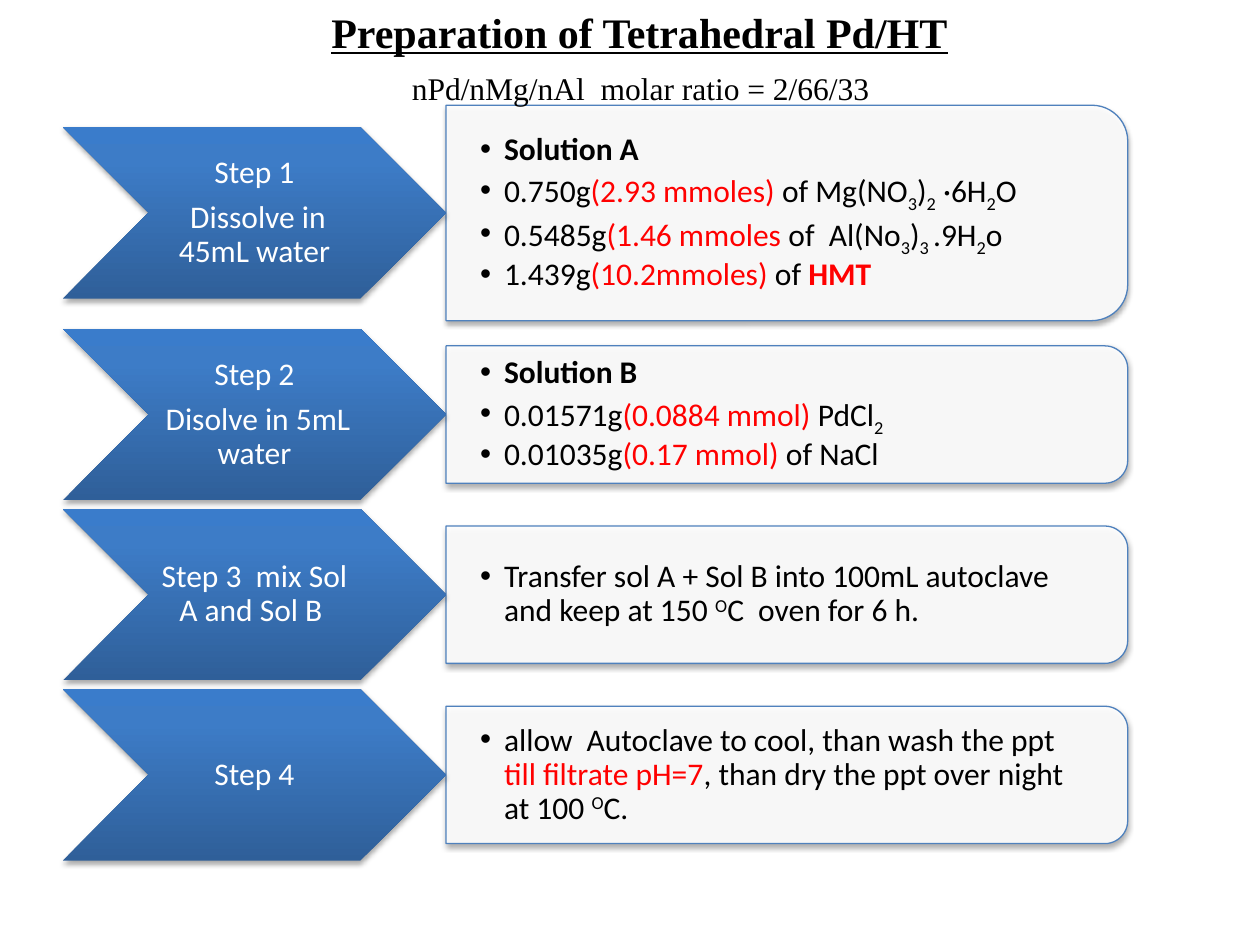
from dataclasses import dataclass
from typing import NamedTuple

from pptx import Presentation, oxml, util as u
from pptx.dml.color import RGBColor
from pptx.enum import shapes, text
from pptx.oxml import ns


@dataclass(frozen=True)
class Theme:
    black: str = "000000"
    white: str = "FFFFFF"
    red: str = "FF0000"
    edge: str = "4F81BD"
    grad: tuple = ((0, "2F5F99"), (80, "3D7CC7"), (100, "3A7CCB"))
    head: str = "Times New Roman"
    body: str = "Calibri"
    big: int = 24
    size: int = 18


class Bit(NamedTuple):
    text: str
    red: bool = False
    bold: bool = False
    base: int = 0


class Step(NamedTuple):
    mid: float
    high: float
    label: list[str]
    lines: list[list[Bit]]


T = Theme()
LEFT, WIDE, TALL = 0.5, 3.04, 1.36
CARD, SPAN = 3.54, 5.41
SUB2, SUB3 = Bit("2", base=-25), Bit("3", base=-25)
DEG = Bit("O", base=30)

STEPS = [
    Step(1.69, 1.71, ["Step 1", " Dissolve in 45mL water"], [
        [Bit("Solution A", bold=True)],
        [Bit("0.750g"), Bit("(2.93 mmoles) ", red=True), Bit("of Mg(NO"), SUB3,
         Bit(")"), SUB2, Bit(" ·6H"), SUB2, Bit("O")],
        [Bit("0.5485g"), Bit("(1.46 mmoles ", red=True), Bit("of  Al(No"), SUB3,
         Bit(")"), Bit("3 ", base=-25), Bit(".9H"), SUB2, Bit("o")],
        [Bit("1.439g"), Bit("(10.2mmoles) ", red=True), Bit("of "),
         Bit("HMT", red=True, bold=True)],
    ]),
    Step(3.29, 1.09, ["Step 2", " Disolve in 5mL water"], [
        [Bit("Solution B", bold=True)],
        [Bit("0.01571g"), Bit("(0.0884 mmol) ", red=True), Bit("PdCl"), SUB2],
        [Bit("0.01035g"), Bit("(0.17 mmol) ", red=True), Bit("of NaCl")],
    ]),
    Step(4.72, 1.09, ["Step 3  mix Sol A and Sol B "], [
        [Bit("Transfer sol A + Sol B into 100mL autoclave  and keep at 150 "),
         DEG, Bit("C  oven for 6 h.")],
    ]),
    Step(6.15, 1.09, ["Step 4"], [
        [Bit("allow  Autoclave to cool, than wash the ppt "),
         Bit("till filtrate pH=7", red=True),
         Bit(", than dry the ppt over night at 100 "), DEG, Bit("C.")],
    ]),
]


def rgb(code: str) -> RGBColor:
    return RGBColor.from_string(code)


def style(para, face: str, size: float, color: str, bold: bool = False) -> None:
    font = para.font
    font.name, font.size, font.bold = face, u.Pt(size), bold
    font.color.rgb = rgb(color)


def space(para, after: float) -> None:
    para.line_spacing = 0.9
    para.space_before, para.space_after = u.Pt(0), u.Pt(after)


def inset(frame, side: float, edge: float) -> None:
    frame.margin_left = frame.margin_right = u.Inches(side)
    frame.margin_top = frame.margin_bottom = u.Inches(edge)
    frame.vertical_anchor = text.MSO_ANCHOR.MIDDLE
    frame.word_wrap = True
    frame.auto_size = text.MSO_AUTO_SIZE.NONE


def place(shape, x: float, y: float, w: float, h: float) -> None:
    shape.left, shape.top = u.Inches(x), u.Inches(y)
    shape.width, shape.height = u.Inches(w), u.Inches(h)


def shade(shape) -> None:
    """Give the shape a soft shadow that falls straight down."""
    shape.shadow.inherit = False
    shape.element.spPr.find(ns.qn("a:effectLst")).append(oxml.parse_xml(
        f'<a:outerShdw {ns.nsdecls("a")} blurRad="{u.Pt(3.1)}" '
        f'dist="{u.Pt(1.8)}" dir="5400000" rotWithShape="0">'
        f'<a:srgbClr val="{T.black}"><a:alpha val="35000"/></a:srgbClr>'
        '</a:outerShdw>'))


def draw_card(slide, step: Step) -> None:
    """Draw a panel turned by 90 degrees, so its round corners face right."""
    card = slide.shapes.add_shape(shapes.MSO_SHAPE.ROUND_2_SAME_RECTANGLE, 0, 0, 0, 0)
    place(card, CARD + (SPAN - step.high) / 2, step.mid - SPAN / 2, step.high, SPAN)
    card.rotation = 90
    card.fill.solid()
    card.fill.fore_color.rgb = rgb(T.white)
    tint = card.element.spPr.find(f'{ns.qn("a:solidFill")}/{ns.qn("a:srgbClr")}')
    tint.append(oxml.parse_xml(f'<a:alpha {ns.nsdecls("a")} val="90000"/>'))
    card.line.color.rgb = rgb(T.edge)
    card.line.width = u.Pt(0.75)
    shade(card)


def fill_list(body, step: Step) -> None:
    high = step.high * 0.9
    place(body, CARD, step.mid - high / 2, SPAN - step.high * 0.05, high)
    body.element.getparent().append(body.element)  # in front of its card
    frame = body.text_frame
    inset(frame, 0.27, 0.14)
    for i, line in enumerate(step.lines):
        para = frame.add_paragraph() if i else frame.paragraphs[0]
        prop = para._p.get_or_add_pPr()
        prop.set("marL", str(u.Inches(0.19)))
        prop.set("indent", str(u.Inches(-0.19)))
        prop.append(oxml.parse_xml(f'<a:buChar {ns.nsdecls("a")} char="•"/>'))
        space(para, 2.7)
        style(para, T.body, T.size, T.black)
        for bit in line:
            run = para.add_run()
            run.text = bit.text
            if bit.red:
                run.font.color.rgb = rgb(T.red)
            if bit.bold:
                run.font.bold = True
            if bit.base:
                run._r.get_or_add_rPr().set("baseline", str(bit.base * 1000))


def draw_arrow(slide, step: Step) -> None:
    arrow = slide.shapes.add_shape(shapes.MSO_SHAPE.CHEVRON, 0, 0, 0, 0)
    place(arrow, LEFT, step.mid - TALL / 2, WIDE, TALL)
    arrow.line.fill.background()
    stops = "".join(f'<a:gs pos="{at * 1000}"><a:srgbClr val="{code}"/></a:gs>'
                    for at, code in T.grad)
    arrow.element.spPr.find(ns.qn("a:ln")).addprevious(oxml.parse_xml(
        f'<a:gradFill {ns.nsdecls("a")} rotWithShape="1"><a:gsLst>{stops}</a:gsLst>'
        '<a:lin ang="16200000" scaled="0"/></a:gradFill>'))
    shade(arrow)
    frame = arrow.text_frame
    inset(frame, 0.07, 0.04)
    for i, words in enumerate(step.label):
        para = frame.add_paragraph() if i else frame.paragraphs[0]
        para.text = words
        para.alignment = text.PP_ALIGN.CENTER
        space(para, 6.3)
        style(para, T.body, T.size, T.white)


def write_head(box, words: str, size: float, bold: bool = False) -> None:
    frame = box.text_frame
    frame.word_wrap = False
    frame.auto_size = text.MSO_AUTO_SIZE.NONE
    frame.vertical_anchor = text.MSO_ANCHOR.TOP
    para = frame.paragraphs[0]
    para.text = words
    para.alignment = text.PP_ALIGN.LEFT
    style(para, T.head, size, T.black, bold)
    para.font.underline = bold


def main() -> None:
    deck = Presentation()
    deck.slide_width, deck.slide_height = u.Inches(10), u.Inches(7.5)
    slide = deck.slides.add_slide(deck.slide_layouts.get_by_name("Comparison"))
    title, *lists = slide.placeholders
    for step, body in zip(STEPS, lists):
        draw_card(slide, step)
        fill_list(body, step)
        draw_arrow(slide, step)
    place(title, 2.53, 0, 5.14, 0.5)
    write_head(title, "Preparation of Tetrahedral Pd/HT", T.big, bold=True)
    title.element.getparent().append(title.element)
    note = slide.shapes.add_textbox(0, 0, 0, 0)
    place(note, 3.17, 0.5, 3.87, 0.4)
    write_head(note, "nPd/nMg/nAl  molar ratio = 2/66/33", T.size)
    deck.save("out.pptx")


if __name__ == "__main__":
    main()
